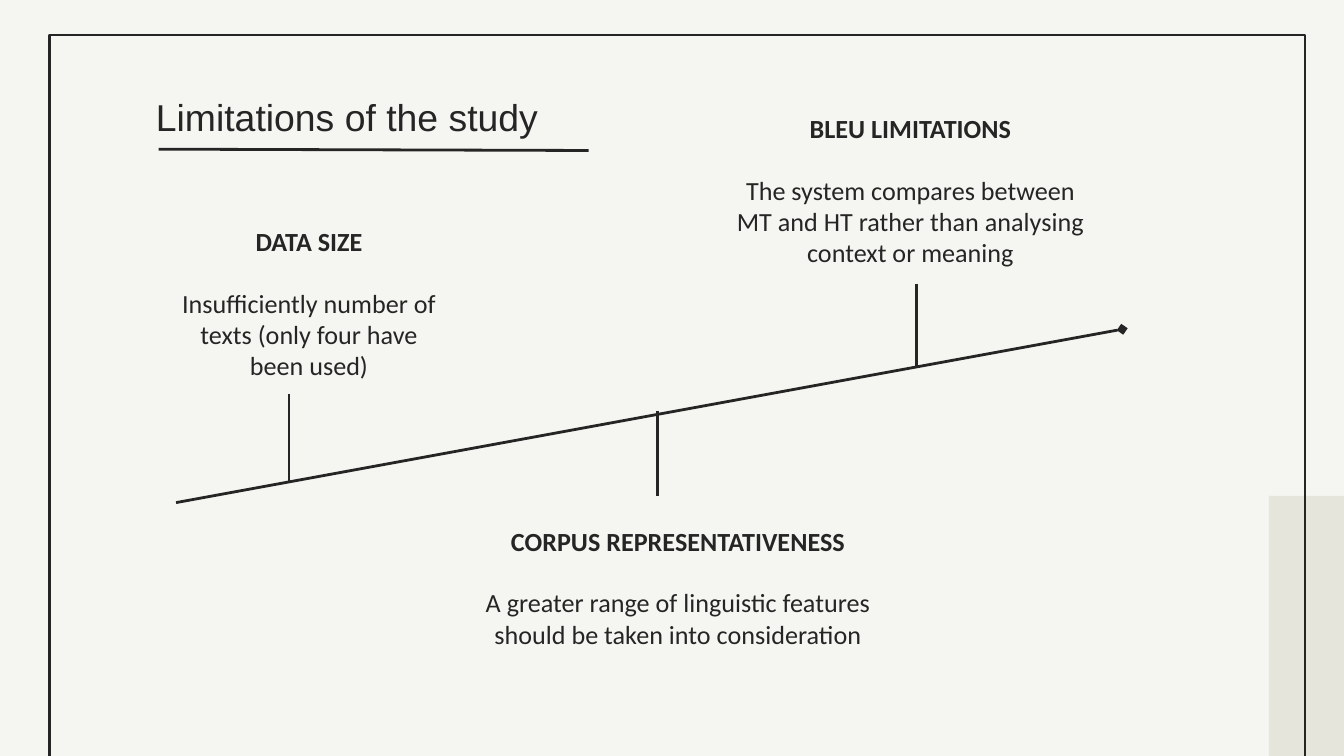
"""Build the slide on the limitations of the study."""

from dataclasses import dataclass

from lxml.etree import SubElement
from pptx import Presentation
from pptx.dml.color import RGBColor
from pptx.enum.shapes import MSO_CONNECTOR, MSO_SHAPE
from pptx.enum.text import MSO_ANCHOR, MSO_AUTO_SIZE, PP_ALIGN
from pptx.oxml.ns import qn
from pptx.shapes.autoshape import Shape
from pptx.shapes.connector import Connector
from pptx.slide import Slide
from pptx.text.text import TextFrame
from pptx.util import Inches, Pt

SLIDE_WIDTH = Inches(10)
SLIDE_HEIGHT = SLIDE_WIDTH * 9 // 16
GRID_COLUMNS = 100
CELL = SLIDE_WIDTH // GRID_COLUMNS

PAPER = RGBColor(0xF5, 0xF6, 0xF1)
SAND = RGBColor(0xE5, 0xE5, 0xDB)
INK = RGBColor(0x25, 0x25, 0x25)
LINE_WIDTH = Pt(1.5)

TITLE_FONT = {"name": "Arial", "size": Pt(20), "bold": False}
HEADING_FONT = {"name": "Calibri", "size": Pt(14), "bold": True}
BODY_FONT = HEADING_FONT | {"bold": False}
FRAME_FORMAT = {
    "word_wrap": True,
    "auto_size": MSO_AUTO_SIZE.NONE,
    "margin_left": CELL,
    "margin_right": CELL,
    "margin_top": CELL,
    "margin_bottom": CELL,
}


@dataclass(frozen=True)
class Area:
    """Rectangle in grid columns and rows."""

    column: float
    row: float
    columns: float
    rows: float

    def lengths(self) -> tuple[int, ...]:
        """Return left, top, width and height in slide units."""
        return tuple(round(value * CELL) for value in (self.column, self.row, self.columns, self.rows))


@dataclass(frozen=True)
class Stroke:
    """Straight line between two grid points."""

    start_column: float
    start_row: float
    end_column: float
    end_row: float


@dataclass(frozen=True)
class Limitation:
    """Heading and explanation with the tick that ties them to the axis."""

    heading: str
    explanation: str
    area: Area
    tick: Stroke


SHADE = Area(94.4, 36.9, 5.8, 22.7)
BORDER = Area(3.7, 2.6, 93.4, 54.8)
TITLE = Area(10.6, 5.8, 79.7, 5.8)
UNDERLINE = Stroke(11.8, 11.1, 43.8, 11.2)
AXIS = Stroke(83.5, 24.5, 13.1, 37.4)
LIMITATIONS = (
    Limitation(
        "DATA SIZE",
        "Insufficiently number of texts (only four have been used)",
        Area(11.8, 15.8, 22.4, 14.2),
        Stroke(21.5, 35.9, 21.5, 29.3),
    ),
    Limitation(
        "CORPUS REPRESENTATIVENESS",
        "A greater range of linguistic features should be taken into consideration",
        Area(34.5, 38.1, 31.9, 14.2),
        Stroke(48.9, 36.9, 48.9, 30.6),
    ),
    Limitation(
        "BLEU LIMITATIONS",
        "The system compares between MT and HT rather than analysing context or meaning",
        Area(53.4, 7.4, 28.7, 12.4),
        Stroke(68.2, 21.1, 68.2, 27.4),
    ),
)


def apply_format(target: object, values: dict) -> None:
    """Set every attribute named in the format values."""
    for name, value in values.items():
        setattr(target, name, value)


def write_paragraphs(frame: TextFrame, lines: list[tuple[str, dict]], alignment: PP_ALIGN) -> None:
    """Write one formatted paragraph per line."""
    apply_format(frame, FRAME_FORMAT)
    for index, (text, font) in enumerate(lines):
        paragraph = frame.add_paragraph() if index else frame.paragraphs[0]
        apply_format(paragraph, {"alignment": alignment, "space_before": Pt(16 if index else 0)})
        run = paragraph.add_run()
        run.text = text
        apply_format(run.font, font)
        run.font.color.rgb = INK


def add_rectangle(slide: Slide, area: Area) -> Shape:
    """Add a rectangle without a shadow."""
    shape = slide.shapes.add_shape(MSO_SHAPE.RECTANGLE, *area.lengths())
    shape.shadow.inherit = False
    return shape


def add_line(slide: Slide, stroke: Stroke) -> Connector:
    """Add a straight ink line."""
    points = (stroke.start_column, stroke.start_row, stroke.end_column, stroke.end_row)
    connector = slide.shapes.add_connector(MSO_CONNECTOR.STRAIGHT, *(round(point * CELL) for point in points))
    connector.line.color.rgb = INK
    connector.line.width = LINE_WIDTH
    SubElement(connector._element.spPr, qn("a:effectLst"))
    return connector


def add_background(slide: Slide) -> None:
    """Add the paper colour, the shaded corner and the border."""
    slide.background.fill.solid()
    slide.background.fill.fore_color.rgb = PAPER
    shade = add_rectangle(slide, SHADE)
    shade.fill.solid()
    shade.fill.fore_color.rgb = SAND
    shade.line.fill.background()
    border = add_rectangle(slide, BORDER)
    border.fill.background()
    border.line.color.rgb = INK
    border.line.width = LINE_WIDTH


def place_title(slide: Slide) -> None:
    """Move and format the title and underline it."""
    title = slide.shapes.title
    apply_format(title, dict(zip(("left", "top", "width", "height"), TITLE.lengths())))
    title.text_frame.vertical_anchor = MSO_ANCHOR.MIDDLE
    write_paragraphs(title.text_frame, [("Limitations of the study", TITLE_FONT)], PP_ALIGN.LEFT)
    add_line(slide, UNDERLINE)


def add_axis(slide: Slide) -> None:
    """Add the rising axis with its diamond end."""
    axis = add_line(slide, AXIS)
    SubElement(axis.line._get_or_add_ln(), qn("a:headEnd"), type="diamond")


def add_limitation(slide: Slide, limitation: Limitation) -> None:
    """Add a tick and its centred text."""
    add_line(slide, limitation.tick)
    box = slide.shapes.add_textbox(*limitation.area.lengths())
    lines = [(limitation.heading, HEADING_FONT), (limitation.explanation, BODY_FONT)]
    write_paragraphs(box.text_frame, lines, PP_ALIGN.CENTER)


def main() -> None:
    """Build and save the presentation."""
    presentation = Presentation()
    apply_format(presentation, {"slide_width": SLIDE_WIDTH, "slide_height": SLIDE_HEIGHT})
    slide = presentation.slides.add_slide(presentation.slide_layouts.get_by_name("Title Only"))
    add_background(slide)
    place_title(slide)
    add_axis(slide)
    for limitation in LIMITATIONS:
        add_limitation(slide, limitation)
    presentation.save("out.pptx")


if __name__ == "__main__":
    main()
